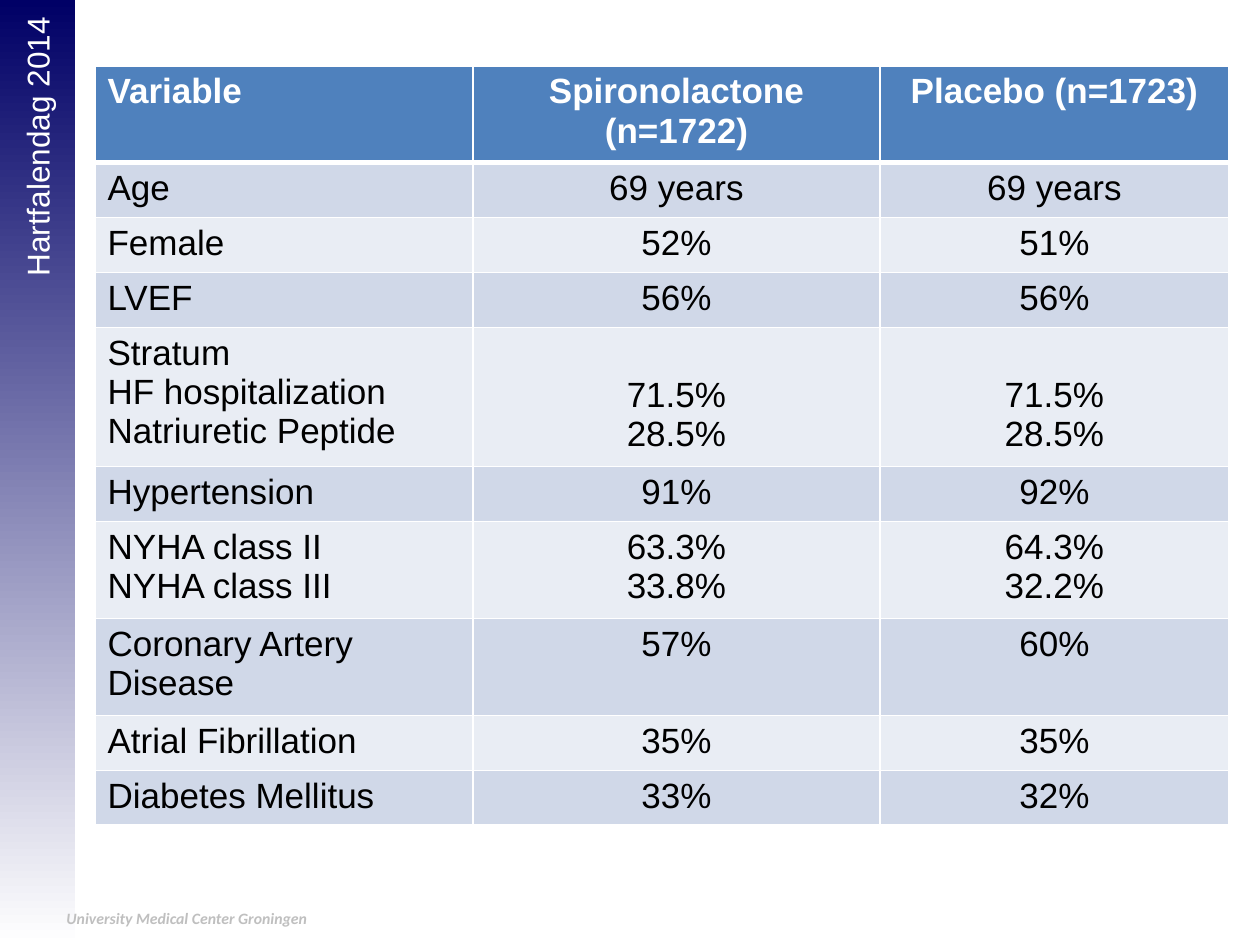
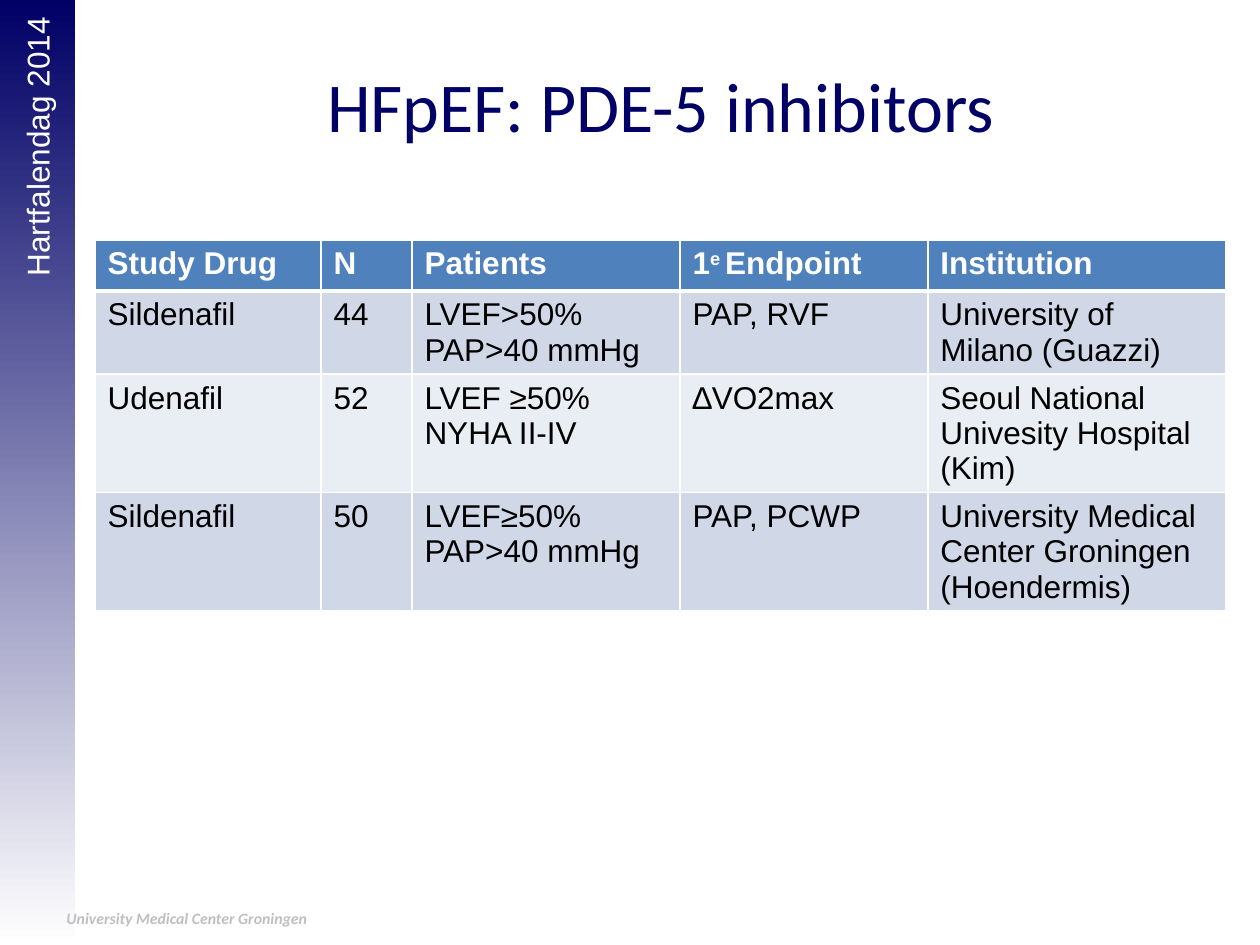
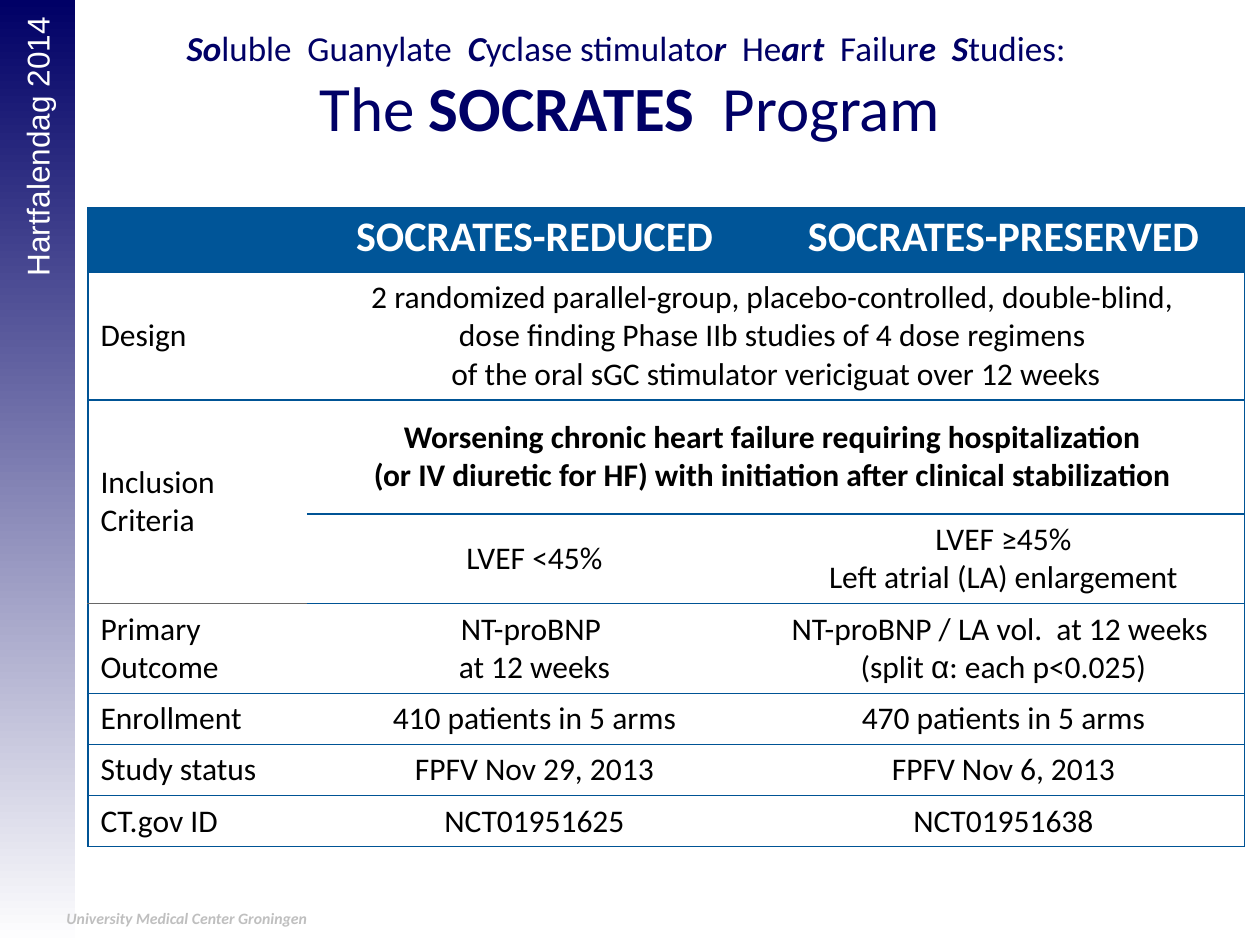
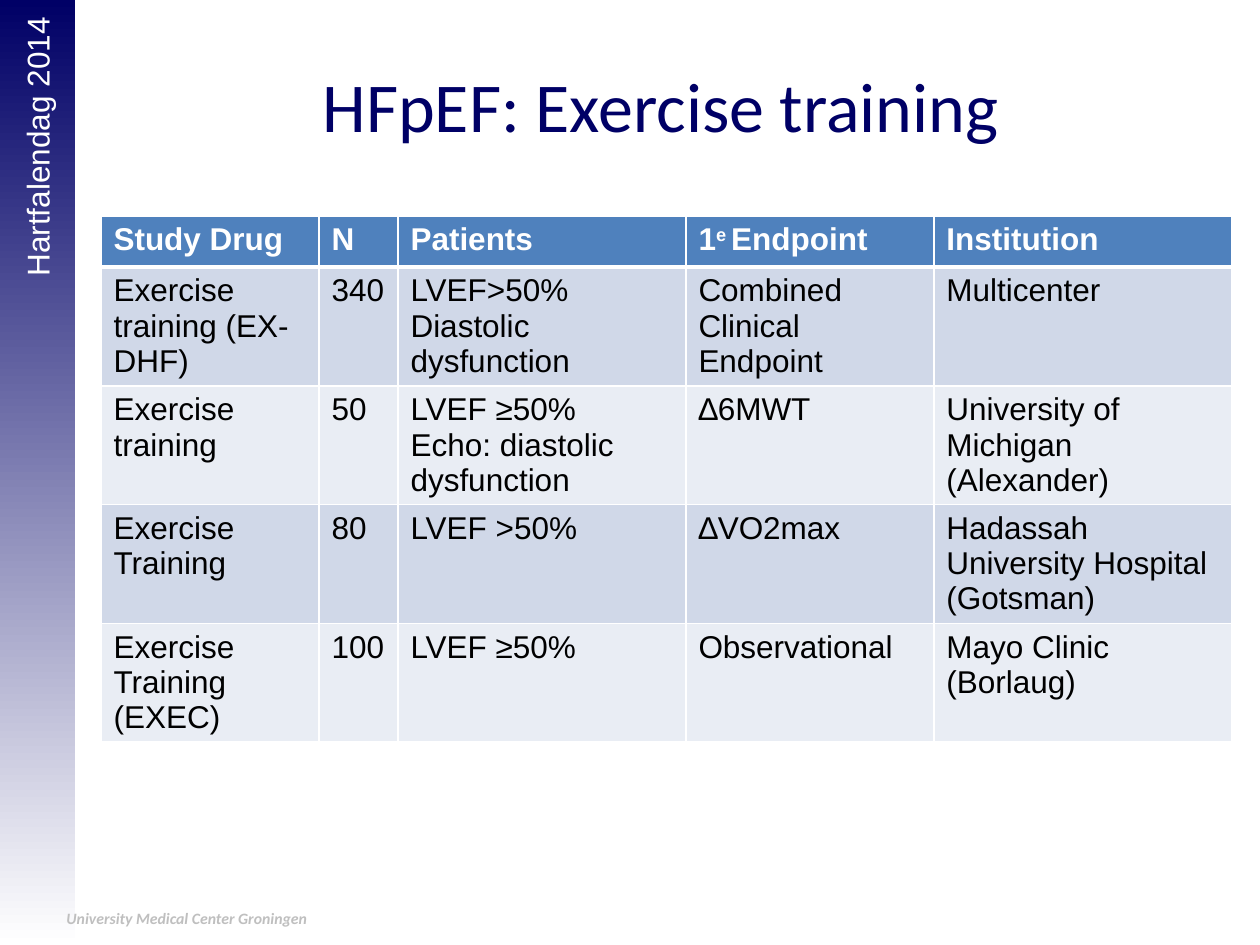
from lxml.etree import SubElement
from copy import deepcopy
from pptx import Presentation
from pptx.dml.color import RGBColor
from pptx.enum.shapes import MSO_SHAPE
from pptx.enum.text import MSO_ANCHOR, MSO_AUTO_SIZE, PP_ALIGN
from pptx.oxml.ns import qn
from pptx.util import Emu, Pt

COLORS = {
    "navy": "000066", "white": "FFFFFF", "black": "000000", "footer": "BFBFBF",
    "header": "4F81BD", "band": "D0D8E8", "light": "E9EDF4",
    "socrates": "005598", "rule": "005395", "gray": "676767",
}
EMU_PER_PX = 914400 / 126
SLIDE_SIZE = (1260, 945)
EVENT = "Hartfalendag 2014"
FOOTER = "University Medical Center Groningen"

STRONG = {"bold": True, "italic": True}
BOLD = {"bold": True}
STUDY_HEADER = ["Study Drug", "N", "Patients",
                [["1", ("e ", {"baseline": 30000}), "Endpoint"]], "Institution"]

BASELINE = {
    "at": (95, 66), "cols": [378, 407, 349],
    "heights": [96, 54, 55, 55, 138, 55, 97, 97, 55, 54],
    "size": 20, "centered": True, "top_margins": {(4, 1): 49, (4, 2): 49},
    "rows": [
        ["Variable", "Spironolactone (n=1722)", "Placebo (n=1723)"],
        ["Age", "69 years", "69 years"],
        ["Female", "52%", "51%"],
        ["LVEF", "56%", "56%"],
        ["Stratum\nHF hospitalization\nNatriuretic Peptide", "71.5%\n28.5%", "71.5%\n28.5%"],
        ["Hypertension", "91%", "92%"],
        ["NYHA class II\nNYHA class III", "63.3%\n33.8%", "64.3%\n32.2%"],
        ["Coronary Artery Disease", "57%", "60%"],
        ["Atrial Fibrillation", "35%", "35%"],
        ["Diabetes Mellitus", "33%", "32%"],
    ],
}
INHIBITORS = {
    "at": (95, 240), "cols": [226, 91, 268, 248, 298], "heights": [51, 83, 118, 118],
    "rows": [
        STUDY_HEADER,
        ["Sildenafil", "44", "LVEF>50%\nPAP>40 mmHg", "PAP, RVF",
         "University of Milano (Guazzi)"],
        ["Udenafil", "52", "LVEF ≥50%\nNYHA II-IV", "∆VO2max",
         "Seoul National Univesity Hospital (Kim)"],
        ["Sildenafil", "50", "LVEF≥50%\nPAP>40 mmHg", "PAP, PCWP",
         "University Medical Center Groningen (Hoendermis)"],
    ],
}
SOCRATES = {
    "at": (88, 208), "cols": [219, 455, 483],
    "heights": [64, 128, 114, 89, 90, 50, 51, 51],
    "font": "Calibri", "header_size": 24, "centered": True, "ruled": True,
    "merges": [((1, 1), (1, 2)), ((2, 0), (3, 0)), ((2, 1), (2, 2))],
    "rows": [
        ["", "SOCRATES-REDUCED", "SOCRATES-PRESERVED"],
        ["Design",
         "2 randomized parallel-group, placebo-controlled, double-blind, \n"
         "dose finding Phase IIb studies of 4 dose regimens \n"
         "of the oral sGC stimulator vericiguat over 12 weeks", None],
        ["Inclusion Criteria",
         [[("Worsening chronic heart failure requiring hospitalization ", BOLD)],
          [("(or IV diuretic for HF) with initiation after clinical stabilization ", BOLD)]],
         None],
        [None, "LVEF <45%", "LVEF ≥45%\nLeft atrial (LA) enlargement"],
        ["Primary Outcome", "NT-proBNP \nat 12 weeks",
         ["NT-proBNP / LA vol.  at 12 weeks ",
          ["(split ", ("α", {"font": "Arial"}), ": each p<0.025)"]]],
        ["Enrollment", "410 patients in 5 arms", "470 patients in 5 arms"],
        ["Study status", "FPFV Nov 29, 2013", "FPFV Nov 6, 2013"],
        ["CT.gov ID", "NCT01951625", "NCT01951638"],
    ],
}
EXERCISE = {
    "at": (101, 216), "cols": [218, 79, 288, 248, 298],
    "heights": [51, 119, 118, 119, 118],
    "rows": [
        STUDY_HEADER,
        ["Exercise training (EX-DHF)", "340", "LVEF>50%\nDiastolic dysfunction",
         "Combined Clinical Endpoint", "Multicenter"],
        ["Exercise training", "50", "LVEF ≥50%\nEcho: diastolic dysfunction", "∆6MWT",
         "University of Michigan (Alexander)"],
        ["Exercise Training", "80", "LVEF >50%", "∆VO2max",
         "Hadassah University Hospital\n(Gotsman)"],
        ["Exercise Training (EXEC)", "100", "LVEF ≥50%", "Observational",
         "Mayo Clinic\n(Borlaug)"],
    ],
}
SOCRATES_TITLE = [[
    ("So", STRONG), "luble  Guanylate  ", ("C", STRONG), "yclase stimulato", ("r", STRONG),
    "  He", ("a", STRONG), "r", ("t", STRONG), "  Failur", ("e  S", STRONG), "tudies: ", "\n",
    ("The", {"size": 36}), (" SOCRATES", {"size": 36, "bold": True}),
    ("  Program", {"size": 36}),
]]
TITLE_AT = (95, 26, 1131, 158)
SLIDES = [
    {"table": BASELINE},
    {"title": "HFpEF: PDE-5 inhibitors", "table": INHIBITORS},
    {"title": SOCRATES_TITLE, "title_at": (63, 6, 1134, 158), "title_size": 20,
     "table": SOCRATES},
    {"title": "HFpEF: Exercise training", "table": EXERCISE},
]


def px(*lengths):
    return [Emu(round(length * EMU_PER_PX)) for length in lengths]


def rgb(name):
    return RGBColor.from_string(COLORS[name])


def format_span(span, font="Arial", size=18, color="black", bold=False, italic=False,
                baseline=None):
    span.font.name, span.font.size = font, Pt(size)
    span.font.bold, span.font.italic = bold, italic
    span.font.color.rgb = rgb(color)
    if baseline:
        span._r.get_or_add_rPr().set("baseline", str(baseline))


def write(frame, text, align=PP_ALIGN.LEFT, **style):
    """Fill a frame from a string, or from a list of paragraphs made of spans."""
    frame.word_wrap = True
    paragraphs = text.split("\n") if isinstance(text, str) else text
    for index, spans in enumerate(paragraphs):
        para = frame.add_paragraph() if index else frame.paragraphs[0]
        para.alignment = align
        for part in [spans] if isinstance(spans, str) else spans:
            words, extra = (part, {}) if isinstance(part, str) else part
            if words == "\n":
                para.add_line_break()
                para._p[-1].append(deepcopy(para.runs[-1]._r.rPr))
            elif words:
                span = para.add_run()
                span.text = words
                format_span(span, **{**style, **extra})


def set_borders(cell, **edges):
    """Draw each edge given as (colour, points); an edge left out gets no line."""
    properties = cell._tc.get_or_add_tcPr()
    for side in "LRTB":
        line = SubElement(properties, qn(f"a:ln{side}"))
        if side in edges:
            color, width = edges[side]
            line.set("w", str(Pt(width)))
            fill = SubElement(line, qn("a:solidFill"))
            SubElement(fill, qn("a:srgbClr")).set("val", COLORS[color])
        else:
            SubElement(line, qn("a:noFill"))


def ruled_edges(cell, row, column, column_count):
    thin, gray = ("rule", 0.75), ("gray", 1)
    edges = {"T": gray if (row, column) == (4, 0) else thin,
             "B": gray if (row, column) == (2, 0) else thin}
    if column == 0:
        edges["L"] = thin
    if column + cell.span_width >= column_count:
        edges["R"] = thin
    return edges


def banded_edges(row):
    thin, thick = ("white", 1), ("white", 3)
    return {"L": thin, "R": thin, "T": thick if row == 1 else thin,
            "B": thick if row == 0 else thin}


def add_study_table(page, content):
    rows, cols, heights = content["rows"], content["cols"], content["heights"]
    ruled = content.get("ruled", False)
    size = content.get("size", 18)
    frame = page.shapes.add_table(len(rows), len(cols),
                                  *px(*content["at"], sum(cols), sum(heights)))
    table = frame.table
    for column, width in zip(table.columns, px(*cols)):
        column.width = width
    for row, height in zip(table.rows, px(*heights)):
        row.height = height
    for first, last in content.get("merges", []):
        table.cell(*first).merge(table.cell(*last))

    for r, texts in enumerate(rows):
        header = r == 0
        for c, text in enumerate(texts):
            if text is None:
                continue
            cell = table.cell(r, c)
            if ruled:
                set_borders(cell, **ruled_edges(cell, r, c, len(cols)))
                fill = "socrates" if header else None
                if header:
                    cell.margin_top, cell.margin_bottom = px(4, 4)
                else:
                    cell.vertical_anchor = MSO_ANCHOR.MIDDLE
            else:
                set_borders(cell, **banded_edges(r))
                fill = "header" if header else "band" if r % 2 else "light"
            if fill:
                cell.fill.solid()
                cell.fill.fore_color.rgb = rgb(fill)
            else:
                cell.fill.background()
            if (r, c) in content.get("top_margins", {}):
                cell.margin_top, = px(content["top_margins"][r, c])
            write(cell.text_frame, text,
                  align=PP_ALIGN.CENTER if content.get("centered") and c else PP_ALIGN.LEFT,
                  font=content.get("font", "Arial"),
                  size=content.get("header_size", size) if header else size,
                  color="white" if header else "black", bold=header)


def add_master_parts(deck, page):
    """Build the side band, event name and footer, then move them to the slide master."""
    band = page.shapes.add_shape(MSO_SHAPE.RECTANGLE, *px(0, 0, 75, SLIDE_SIZE[1]))
    band.shadow.inherit = False
    band.line.fill.background()
    band.fill.gradient()
    band.fill.gradient_angle = 270
    for stop, color in zip(band.fill.gradient_stops, ("navy", "white")):
        stop.color.rgb = rgb(color)

    event = page.shapes.add_textbox(*px(-420, 437, 914, 50))
    event.rotation = 270
    write(event.text_frame, EVENT, align=PP_ALIGN.RIGHT, color="white")

    footer = page.shapes.add_textbox(*px(54, 903, 765, 65))
    write(footer.text_frame, FOOTER, font="Calibri", size=9, color="footer",
          bold=True, italic=True)

    for index, part in enumerate((band, event, footer)):
        part.element.nvSpPr.cNvPr.set("id", str(20 + index))
        deck.slide_master.shapes.element.insert(2 + index, part.element)


def set_title(page, content):
    title = page.shapes.title
    title.left, title.top, title.width, title.height = px(*content.get("title_at", TITLE_AT))
    title.text_frame.auto_size = MSO_AUTO_SIZE.NONE
    title.text_frame.vertical_anchor = MSO_ANCHOR.MIDDLE
    write(title.text_frame, content["title"], align=PP_ALIGN.CENTER, font="Calibri",
          size=content.get("title_size", 40), color="navy")


def main():
    deck = Presentation()
    deck.slide_width, deck.slide_height = px(*SLIDE_SIZE)
    title_only, blank = deck.slide_layouts[5], deck.slide_layouts[6]
    for content in SLIDES:
        page = deck.slides.add_slide(title_only if "title" in content else blank)
        if "title" in content:
            set_title(page, content)
        add_study_table(page, content["table"])
    add_master_parts(deck, deck.slides[0])
    deck.save("out.pptx")


if __name__ == "__main__":
    main()
